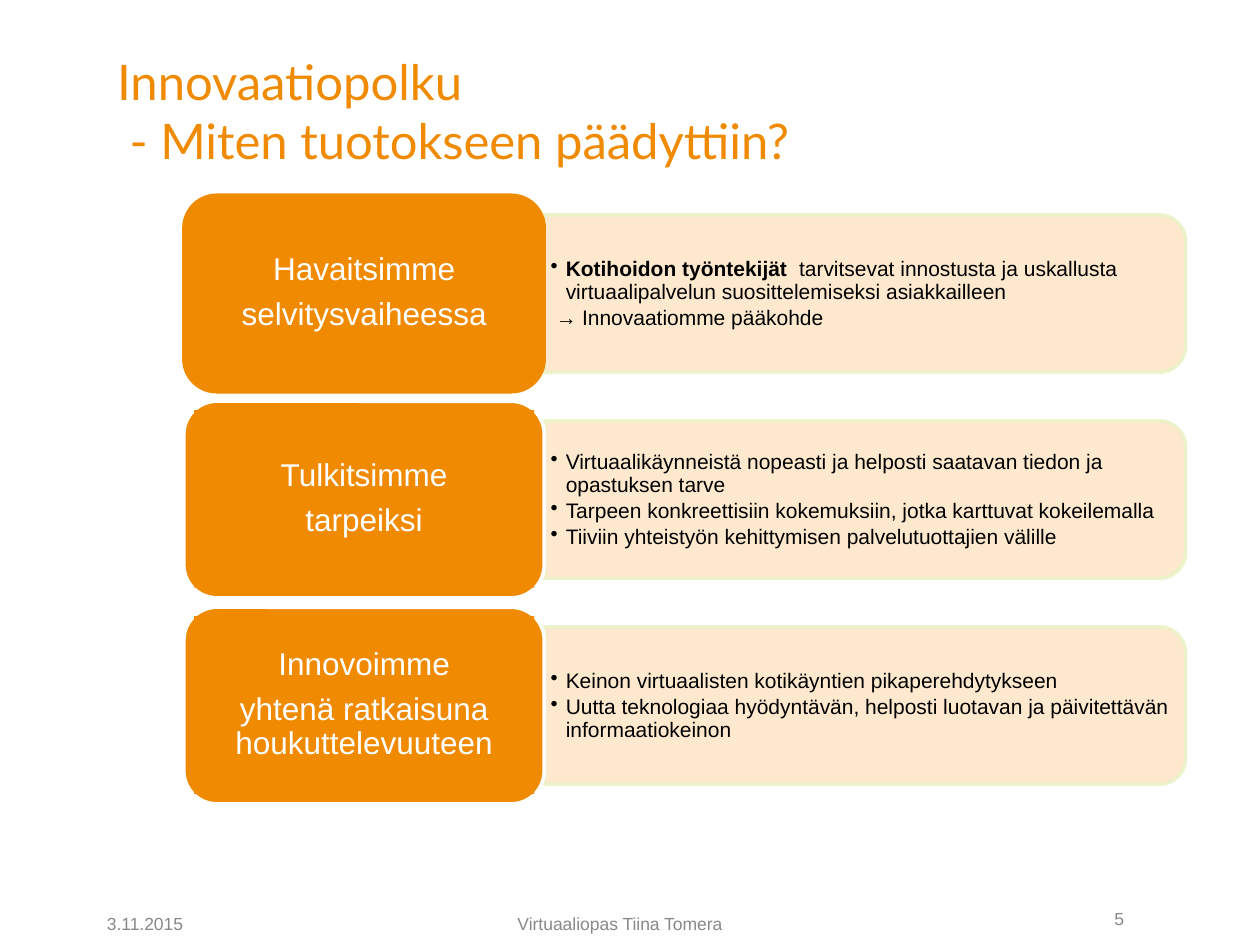
from pptx import Presentation
from pptx.dml.color import RGBColor
from pptx.enum.shapes import MSO_SHAPE as Shape
from pptx.enum.text import MSO_ANCHOR as Anchor, PP_ALIGN as Align
from pptx.oxml.ns import qn
from pptx.util import Inches, Pt
from lxml.etree import SubElement

ORANGE = RGBColor(0xF0, 0x8A, 0x00)
CREAM = RGBColor(0xFE, 0xE7, 0xC9)
LIME = RGBColor(0xEB, 0xF2, 0xC8)
WHITE = RGBColor(0xFF, 0xFF, 0xFF)
BLACK = RGBColor(0, 0, 0)
GREY = RGBColor(0x87, 0x89, 0x89)

TOP, STEP = 1.55, 1.635
HANG = 0.12

ROWS = [
    (ORANGE, ["Havaitsimme", "selvitysvaiheessa"], [
        [("Kotihoidon työntekijät  ", "Arial", True),
         ("tarvitsevat innostusta ja uskallusta virtuaalipalvelun "
          "suosittelemiseksi asiakkailleen", "Arial", False)],
        [(" → ", "Times New Roman", False),
         ("Innovaatiomme pääkohde", "Arial", False)],
    ]),
    (WHITE, ["Tulkitsimme", "tarpeiksi"], [
        "Virtuaalikäynneistä nopeasti ja helposti saatavan tiedon ja opastuksen tarve",
        "Tarpeen konkreettisiin kokemuksiin, jotka karttuvat kokeilemalla",
        "Tiiviin yhteistyön kehittymisen palvelutuottajien välille",
    ]),
    (WHITE, ["Innovoimme", "yhtenä ratkaisuna houkuttelevuuteen"], [
        "Keinon virtuaalisten kotikäyntien pikaperehdytykseen",
        "Uutta teknologiaa hyödyntävän, helposti luotavan ja päivitettävän "
        "informaatiokeinon",
    ]),
]


def place(item, *box):
    item.left, item.top, item.width, item.height = map(Inches, box)


def set_font(para, size, color, name="Arial"):
    para.font.size = Pt(size)
    para.font.name = name
    para.font.color.rgb = color


def set_frame(frame, side, edge, anchor):
    frame.word_wrap = True
    frame.vertical_anchor = anchor
    frame.margin_left = frame.margin_right = Inches(side)
    frame.margin_top = frame.margin_bottom = Inches(edge)


def add_paras(frame, count):
    return [frame.paragraphs[0]] + [frame.add_paragraph() for _ in range(count - 1)]


def add_box(slide, kind, box, fill, line=None):
    shape = slide.shapes.add_shape(kind, *map(Inches, box))
    shape.shadow.inherit = False
    shape.fill.solid()
    shape.fill.fore_color.rgb = fill
    if line is None:
        shape.line.fill.background()
    else:
        shape.line.color.rgb = line
        shape.line.width = Pt(2)
    return shape


def add_panel(slide, top):
    wide, high = 5.09, 1.25
    left, mid = 4.32, top + 0.78
    box = (left + (wide - high) / 2, mid - wide / 2, high, wide)
    panel = add_box(slide, Shape.ROUND_2_SAME_RECTANGLE, box, CREAM, LIME)
    panel.rotation = 90
    panel.adjustments[0] = 0.167
    panel.adjustments[1] = 0
    for color in panel._element.spPr.iter(qn("a:srgbClr")):
        SubElement(color, qn("a:alpha"), val="89000")


def set_bullet(para, mark):
    props = para._p.get_or_add_pPr()
    hang = Inches(HANG) if mark else 0
    props.set("marL", str(hang))
    props.set("indent", str(-hang))
    if mark:
        tint = SubElement(props, qn("a:buClr"))
        SubElement(tint, qn("a:srgbClr"), val=str(BLACK))
        SubElement(props, qn("a:buChar"), char="•")
    else:
        SubElement(props, qn("a:buNone"))


def add_points(slide, top, points):
    box = slide.shapes.add_textbox(*map(Inches, (4.32, top + 0.22, 5.02, 1.13)))
    set_frame(box.text_frame, 0.05, 0.02, Anchor.MIDDLE)
    paras = add_paras(box.text_frame, len(points))
    for i, (para, point) in enumerate(zip(paras, points)):
        plain = isinstance(point, str)
        para.level = 1
        set_bullet(para, plain or i == 0)
        set_font(para, 12, BLACK)
        para.line_spacing = 0.9
        para.space_before = Pt(1.8 if i else 0)
        if plain:
            para.text = point
            continue
        for text, name, bold in point:
            run = para.add_run()
            run.text = text
            run.font.name = name
            run.font.bold = bold
    paras[-1].space_after = Pt(1.8)


def add_card(slide, top, line, words):
    card = add_box(slide, Shape.ROUNDED_RECTANGLE, (1.46, top, 2.86, 1.56), ORANGE, line)
    card.adjustments[0] = 0.167
    label = add_box(slide, Shape.RECTANGLE, (1.54, top + 0.07, 2.7, 1.41), ORANGE)
    set_frame(label.text_frame, 0.07, 0.04, Anchor.MIDDLE)
    paras = add_paras(label.text_frame, len(words))
    for i, (para, word) in enumerate(zip(paras, words)):
        para.text = word
        para.alignment = Align.CENTER
        para.line_spacing = 0.9
        para.space_before = Pt(6.3 if i else 0)
        set_font(para, 18, WHITE)
    paras[-1].space_after = Pt(6.3)


def add_note(slide, left, width, text, align, edge=0.1):
    box = slide.shapes.add_textbox(*map(Inches, (left, 7.16, width, 0.33)))
    set_frame(box.text_frame, 0.1, edge, Anchor.TOP)
    para = box.text_frame.paragraphs[0]
    para.text = text
    para.alignment = align
    set_font(para, 10, GREY)


def set_title(slide, text):
    title = slide.shapes.title
    place(title, 0.83, 0.36, 8.5, 1)
    title.text_frame.text = text
    set_frame(title.text_frame, 0.1, 0.05, Anchor.TOP)
    para = title.text_frame.paragraphs[0]
    para.alignment = Align.LEFT
    set_font(para, 28, ORANGE, "Lato")


def main():
    deck = Presentation()
    deck.slide_width, deck.slide_height = Inches(10), Inches(7.5)
    slide = deck.slides.add_slide(deck.slide_layouts[5])
    set_title(slide, "Innovaatiopolku\v - Miten tuotokseen päädyttiin?")
    for i, (line, words, points) in enumerate(ROWS):
        top = TOP + i * STEP
        add_panel(slide, top)
        add_points(slide, top, points)
        add_card(slide, top, line, words)
    add_note(slide, 0.75, 1.67, "3.11.2015", Align.LEFT)
    add_note(slide, 2.5, 4.84, "Virtuaaliopas Tiina Tomera", Align.CENTER)
    add_note(slide, 7.42, 1.6, "5", Align.RIGHT, 0.05)
    deck.save("out.pptx")


if __name__ == "__main__":
    main()
